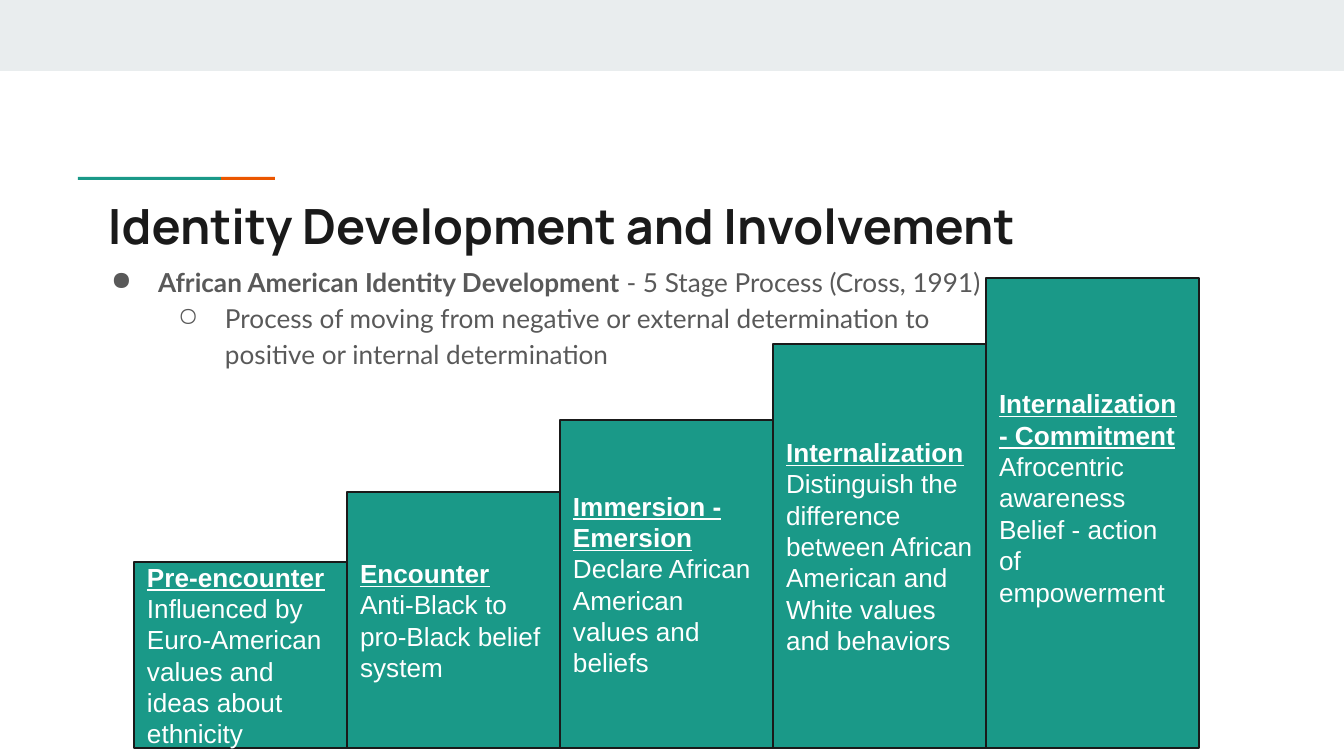
from lxml.etree import SubElement
from pptx import Presentation
from pptx.dml.color import RGBColor
from pptx.enum.shapes import MSO_SHAPE
from pptx.enum.text import MSO_ANCHOR, MSO_AUTO_SIZE, PP_ALIGN
from pptx.oxml.ns import qn
from pptx.util import Emu, Pt

WHITE = RGBColor(0xFF, 0xFF, 0xFF)
MIST = RGBColor(0xE9, 0xED, 0xEE)
TEAL = RGBColor(0x1A, 0x99, 0x88)
ORANGE = RGBColor(0xEB, 0x56, 0x00)
INK = RGBColor(0x1A, 0x1A, 0x1A)
GREY = RGBColor(0x59, 0x59, 0x59)

WIDTH, HEIGHT = 1344, 756
INSET = 13
STEP_LEFT, STEP_WIDTH, STEP_BOTTOM = 134, 213, 748

TITLE_FONT = {"name": "Manrope", "size": Pt(26), "bold": True}
BODY_FONT = {"name": "Lato", "size": Pt(14), "bold": False}
STEP_FONT = {"name": "Arial", "size": Pt(14), "bold": False}
STEP_HEAD = {**STEP_FONT, "bold": True, "underline": True}

BULLETS = [
    ("●", [("African American Identity Development", True),
           (" - 5 Stage Process (Cross, 1991)", False)]),
    ("○", [("Process of moving from negative or external determination to "
            "positive or internal determination", False)]),
]
STEPS = [
    (562, INSET, "Pre-encounter",
     ["Influenced by Euro-American values and ideas about ethnicity"]),
    (492, INSET, "Encounter", ["Anti-Black to pro-Black belief system"]),
    (420, INSET, "Immersion - Emersion",
     ["Declare African American values and beliefs"]),
    (344, INSET, "Internalization",
     ["Distinguish the difference between African American and White values "
      "and behaviors"]),
    (278, 44, "Internalization - Commitment",
     ["Afrocentric awareness", "Belief - action of empowerment"]),
]


def px(n):
    """Turn pixels into EMU."""
    return Emu(round(n * 914400 / 134.4))


class Deck:
    """Hold the style and the current slide."""

    def __init__(self):
        """Open a presentation with one title-only slide."""
        self.prs = Presentation()
        self.prs.slide_width, self.prs.slide_height = px(WIDTH), px(HEIGHT)
        self.s = self.prs.slides.add_slide(self.prs.slide_layouts[5])

    def frame(self, sp, anchor, bottom=INSET):
        """Set the wrapping, anchor and insets of a shape's text."""
        tf = sp.text_frame
        values = {"word_wrap": True, "auto_size": MSO_AUTO_SIZE.NONE,
                  "vertical_anchor": anchor, "margin_left": px(INSET),
                  "margin_right": px(INSET), "margin_top": px(INSET),
                  "margin_bottom": px(bottom)}
        for key, value in values.items():
            setattr(tf, key, value)
        return tf

    def paragraph(self, tf, first):
        """Return the first or a new left-aligned paragraph."""
        p = tf.paragraphs[0] if first else tf.add_paragraph()
        p.alignment = PP_ALIGN.LEFT
        return p

    def run(self, p, text, style, color):
        """Add a formatted run."""
        r = p.add_run()
        r.text = text
        for key, value in style.items():
            setattr(r.font, key, value)
        r.font.color.rgb = color

    def title(self, text, x, y, w, h):
        """Place and format the title."""
        sp = self.s.shapes.title
        sp.left, sp.top, sp.width, sp.height = map(px, (x, y, w, h))
        tf = self.frame(sp, MSO_ANCHOR.TOP)
        self.run(self.paragraph(tf, True), text, TITLE_FONT, INK)

    def rect(self, x, y, w, h, fill, line=None):
        """Add a flat rectangle."""
        sp = self.s.shapes.add_shape(MSO_SHAPE.RECTANGLE, *map(px, (x, y, w, h)))
        sp.shadow.inherit = False
        sp.fill.solid()
        sp.fill.fore_color.rgb = fill
        if line is None:
            sp.line.fill.background()
        else:
            sp.line.color.rgb = line
            sp.line.width = Pt(0.75)
        return sp

    def bullets(self, items, x, y, w, h):
        """Add a bulleted list, one level deeper per item."""
        sp = self.s.shapes.add_textbox(*map(px, (x, y, w, h)))
        tf = self.frame(sp, MSO_ANCHOR.TOP)
        for level, (mark, runs) in enumerate(items):
            p = self.paragraph(tf, level == 0)
            p.level = level
            p.line_spacing = 1.15
            pPr = p._p.get_or_add_pPr()
            pPr.set("marL", str(px(67 * (level + 1))))
            pPr.set("indent", str(px(-47)))
            clr = SubElement(pPr, qn("a:buClr"))
            SubElement(clr, qn("a:srgbClr"), val=str(GREY))
            SubElement(pPr, qn("a:buChar"), char=mark)
            for text, bold in runs:
                self.run(p, text, {**BODY_FONT, "bold": bold}, GREY)

    def step(self, i, top, bottom_inset, head, lines):
        """Add one step of the staircase."""
        sp = self.rect(STEP_LEFT + i * STEP_WIDTH, top, STEP_WIDTH,
                       STEP_BOTTOM - top, TEAL, INK)
        tf = self.frame(sp, MSO_ANCHOR.MIDDLE, bottom_inset)
        self.run(self.paragraph(tf, True), head, STEP_HEAD, WHITE)
        for line in lines:
            self.run(self.paragraph(tf, False), line, STEP_FONT, WHITE)


def main():
    """Build and save the slide."""
    deck = Deck()
    deck.rect(0, 0, WIDTH, 71, MIST)
    deck.rect(221, 177, 54, 3, ORANGE)
    deck.rect(78, 177, 143, 3, TEAL)
    deck.title("Identity Development and Involvement", 95, 183, 1130, 79)
    deck.bullets(BULLETS, 78, 249, 922, 95)
    for i, step in enumerate(STEPS):
        deck.step(i, *step)
    deck.prs.save("out.pptx")


if __name__ == "__main__":
    main()
